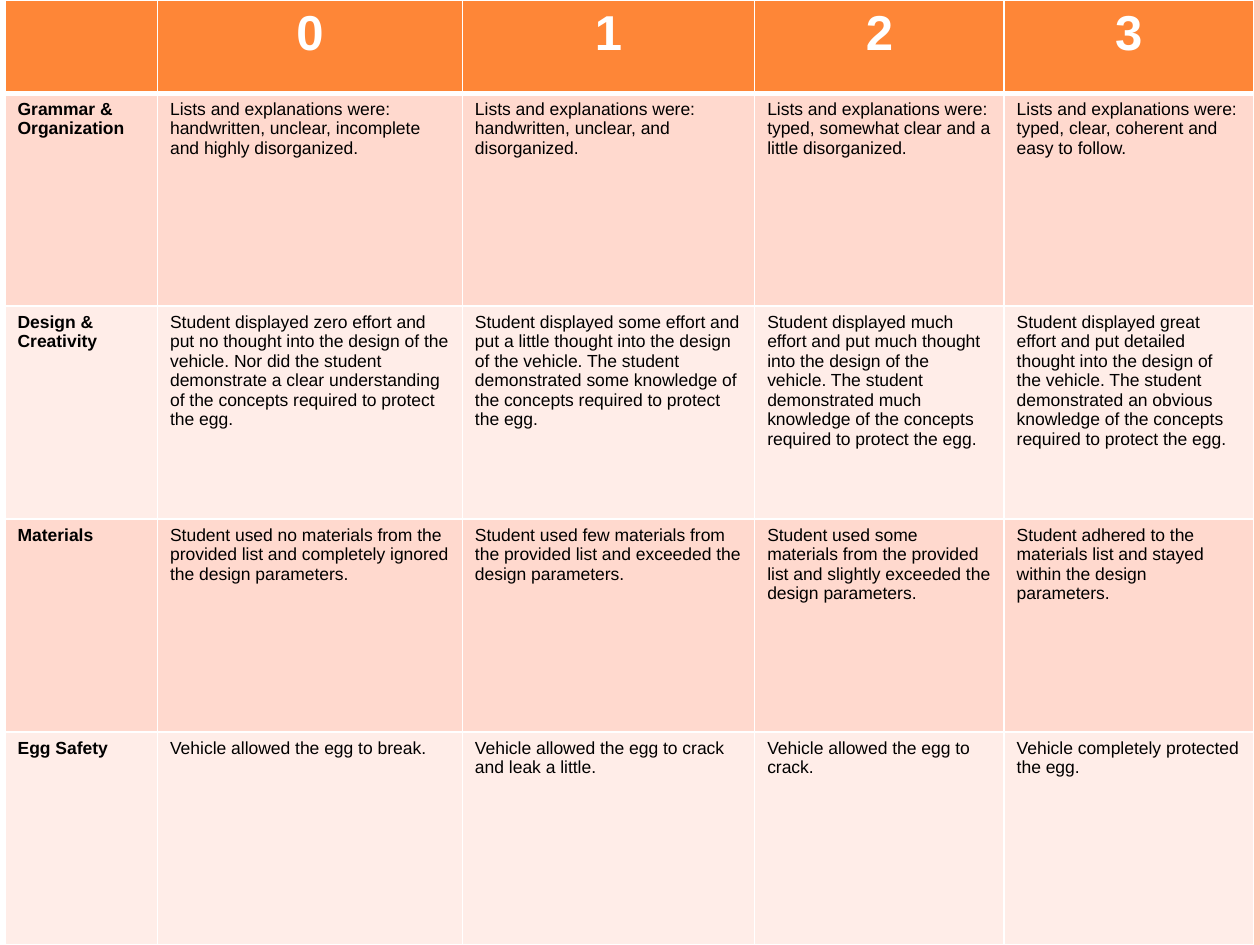
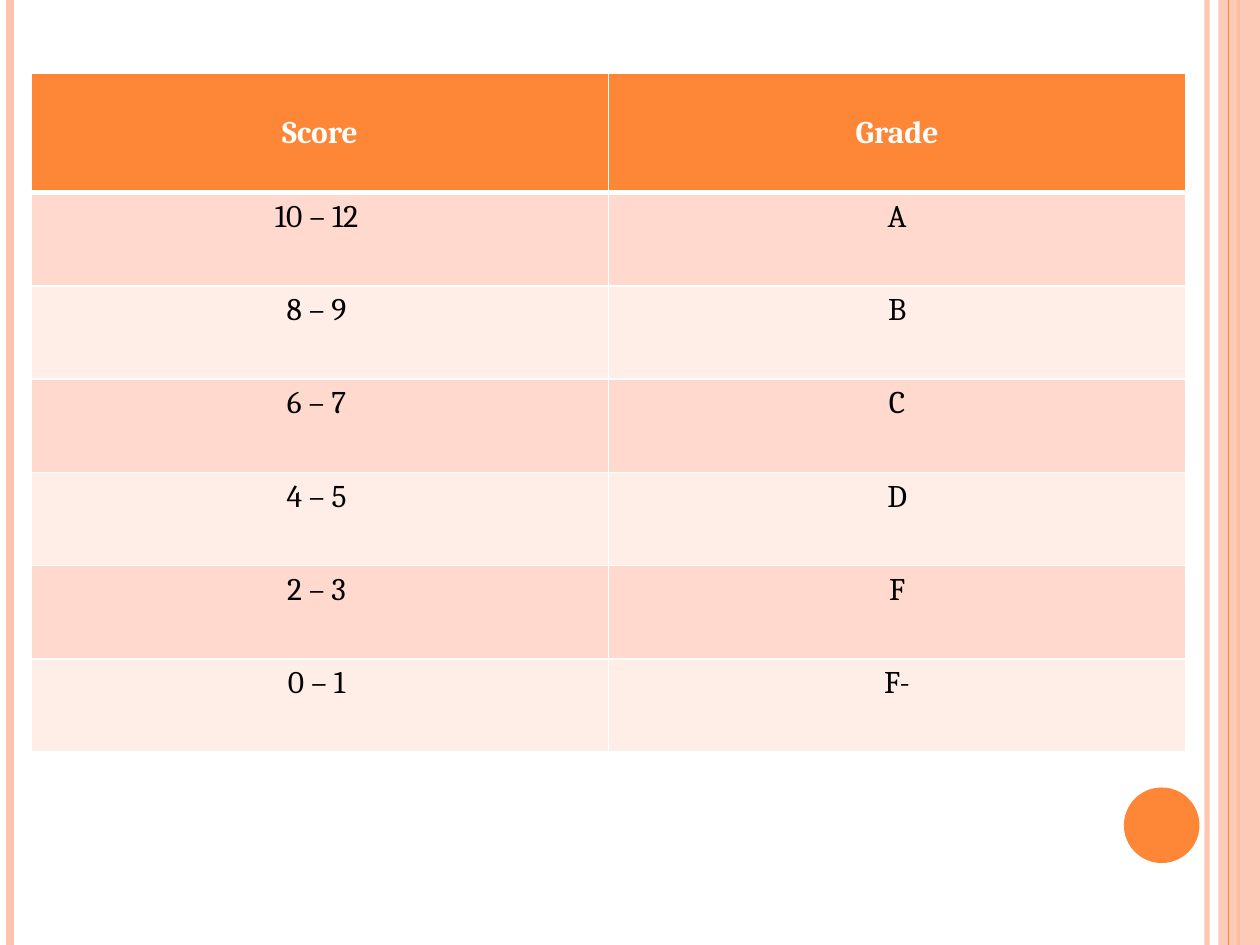
"""Builds the egg vehicle rubric and its grading scale as two table slides."""
import dataclasses

import lxml.etree
import pptx
import pptx.dml.color
import pptx.enum.shapes
import pptx.enum.text
import pptx.oxml.ns
import pptx.util

Inches = pptx.util.Inches
qn = pptx.oxml.ns.qn
CENTER = pptx.enum.text.PP_ALIGN.CENTER
LEFT = pptx.enum.text.PP_ALIGN.LEFT
TOP = pptx.enum.text.MSO_ANCHOR.TOP
MIDDLE = pptx.enum.text.MSO_ANCHOR.MIDDLE


@dataclasses.dataclass(frozen=True)
class Theme:
    accent: str = "FE8637"
    band: str = "FEC3AE"
    row_fills: tuple = ("FFEDE8", "FFD9CE")
    white: str = "FFFFFF"
    black: str = "000000"
    level_size: int = 28
    rubric_size: int = 10
    grade_size: int = 18
    rubric_font: str = "Arial"
    grade_font: str = "Cambria"
    grid_width: int = 1
    header_rule_width: int = 3


theme = Theme()


def rgb(colour):
    return pptx.dml.color.RGBColor.from_string(colour)


def write_text(cell, text, *, size, font, colour, bold=False, align=LEFT, anchor=TOP):
    cell.vertical_anchor = anchor
    paragraph = cell.text_frame.paragraphs[0]
    paragraph.alignment = align
    paragraph.font.size = pptx.util.Pt(size)
    if text:
        run = paragraph.add_run()
        run.text = text
        run.font.size = pptx.util.Pt(size)
        run.font.name = font
        run.font.bold = bold
        run.font.color.rgb = rgb(colour)


rubric = {
    "left": 0.04, "top": 0,
    "columns": [1.21, 2.42, 2.32, 1.98, 1.98],
    "header_height": 0.74, "row_height": 1.69,
    "font": theme.rubric_font,
    "header_size": theme.level_size, "body_size": theme.rubric_size,
    "header_anchor": TOP, "body_align": LEFT, "bold_labels": True,
    "rows": [
        ["", "0", "1", "2", "3"],
        [
            "Grammar & Organization",
            "Lists and explanations were: handwritten, unclear, incomplete and highly disorganized.",
            "Lists and explanations were: handwritten, unclear, and disorganized.",
            "Lists and explanations were: typed, somewhat clear and a little disorganized.",
            "Lists and explanations were: typed, clear, coherent and easy to follow.",
        ],
        [
            "Design & Creativity",
            "Student displayed zero effort and put no thought into the design of the vehicle. "
            "Nor did the student demonstrate a clear understanding of the concepts required to protect the egg.",
            "Student displayed some effort and put a little thought into the design of the vehicle. "
            "The student demonstrated some knowledge of the concepts required to protect the egg.",
            "Student displayed much effort and put much thought into the design of the vehicle. "
            "The student demonstrated much knowledge of the concepts required to protect the egg.",
            "Student displayed great effort and put detailed thought into the design of the vehicle. "
            "The student demonstrated an obvious knowledge of the concepts required to protect the egg.",
        ],
        [
            "Materials",
            "Student used no materials from the provided list and completely ignored the design parameters.",
            "Student used few materials from the provided list and exceeded the design parameters.",
            "Student used some materials from the provided list and slightly exceeded the design parameters.",
            "Student adhered to the materials list and stayed within the design parameters.",
        ],
        [
            "Egg Safety",
            "Vehicle allowed the egg to break.",
            "Vehicle allowed the egg to crack and leak a little.",
            "Vehicle allowed the egg to crack.",
            "Vehicle completely protected the egg.",
        ],
    ],
}
grading_scale = {
    "left": 0.25, "top": 0.58,
    "columns": [4.58, 4.58],
    "header_height": 0.95, "row_height": 0.74,
    "font": theme.grade_font,
    "header_size": theme.grade_size, "body_size": theme.grade_size,
    "header_anchor": MIDDLE, "body_align": CENTER, "bold_labels": False,
    "rows": [
        ["Score", "Grade"],
        ["10 – 12 ", "A"],
        ["8 – 9 ", "B"],
        ["6 – 7 ", "C"],
        ["4 – 5 ", "D"],
        ["2 – 3 ", "F"],
        ["0 – 1 ", "F-"],
    ],
}

presentation = pptx.Presentation()
presentation.slide_width = Inches(10)
presentation.slide_height = Inches(7.5)
height = presentation.slide_height

side_lines = [
    (9.58, theme.band, 3, 93),
    (0.08, theme.band, 4.5, 100),
    (9.83, theme.accent, 1.5, 100),
    (9.75, theme.accent, 0.75, 100),
]
side_shapes = [
    (pptx.enum.shapes.MSO_SHAPE.RECTANGLE, (9.67, 0, 0.33, 7.5), theme.band, 87),
    (pptx.enum.shapes.MSO_SHAPE.OVAL, (8.92, 6.25, 0.6, 0.6), theme.accent, 100),
]

for content in (rubric, grading_scale):
    slide = presentation.slides.add_slide(presentation.slide_layouts[6])

    decorations = side_lines[:3] + side_shapes[:1] + side_lines[3:] + side_shapes[1:]
    for kind, *details, opacity in decorations:
        if (kind, *details, opacity) in side_lines:
            colour, width = details
            shape = slide.shapes.add_connector(
                pptx.enum.shapes.MSO_CONNECTOR.STRAIGHT, Inches(kind), 0, Inches(kind), height)
            shape.line.color.rgb = rgb(colour)
            shape.line.width = pptx.util.Pt(width)
            lxml.etree.SubElement(shape.element.spPr, qn("a:effectLst"))
        else:
            box, colour = details
            shape = slide.shapes.add_shape(kind, *map(Inches, box))
            shape.shadow.inherit = False
            shape.fill.solid()
            shape.fill.fore_color.rgb = rgb(colour)
            shape.line.fill.background()
        if opacity < 100:
            for colour_element in shape.element.spPr.iter(qn("a:srgbClr")):
                lxml.etree.SubElement(colour_element, qn("a:alpha"), val=str(opacity * 1000))

    rows, columns = content["rows"], content["columns"]
    heights = [content["header_height"]] + [content["row_height"]] * (len(rows) - 1)
    table = slide.shapes.add_table(
        len(rows), len(columns), Inches(content["left"]), Inches(content["top"]),
        Inches(sum(columns)), Inches(sum(heights))).table
    table.horz_banding = False
    for column, width in zip(table.columns, columns):
        column.width = Inches(width)
    for row_index, texts in enumerate(rows):
        table.rows[row_index].height = Inches(heights[row_index])
        header = row_index == 0
        for column_index, text in enumerate(texts):
            cell = table.cell(row_index, column_index)
            write_text(
                cell, text, font=content["font"],
                size=content["header_size"] if header else content["body_size"],
                colour=theme.white if header else theme.black,
                bold=header or (content["bold_labels"] and column_index == 0),
                align=CENTER if header else content["body_align"],
                anchor=content["header_anchor"] if header else TOP)
            properties = cell._tc.get_or_add_tcPr()
            for side in "LRTB":
                header_rule = (row_index, side) in ((0, "B"), (1, "T"))
                width = theme.header_rule_width if header_rule else theme.grid_width
                border = lxml.etree.SubElement(
                    properties, qn(f"a:ln{side}"), w=str(pptx.util.Pt(width)))
                border_fill = lxml.etree.SubElement(border, qn("a:solidFill"))
                lxml.etree.SubElement(border_fill, qn("a:srgbClr"), val=theme.white)
            cell.fill.solid()
            cell.fill.fore_color.rgb = rgb(theme.accent if header else theme.row_fills[row_index % 2])

presentation.save("out.pptx")
